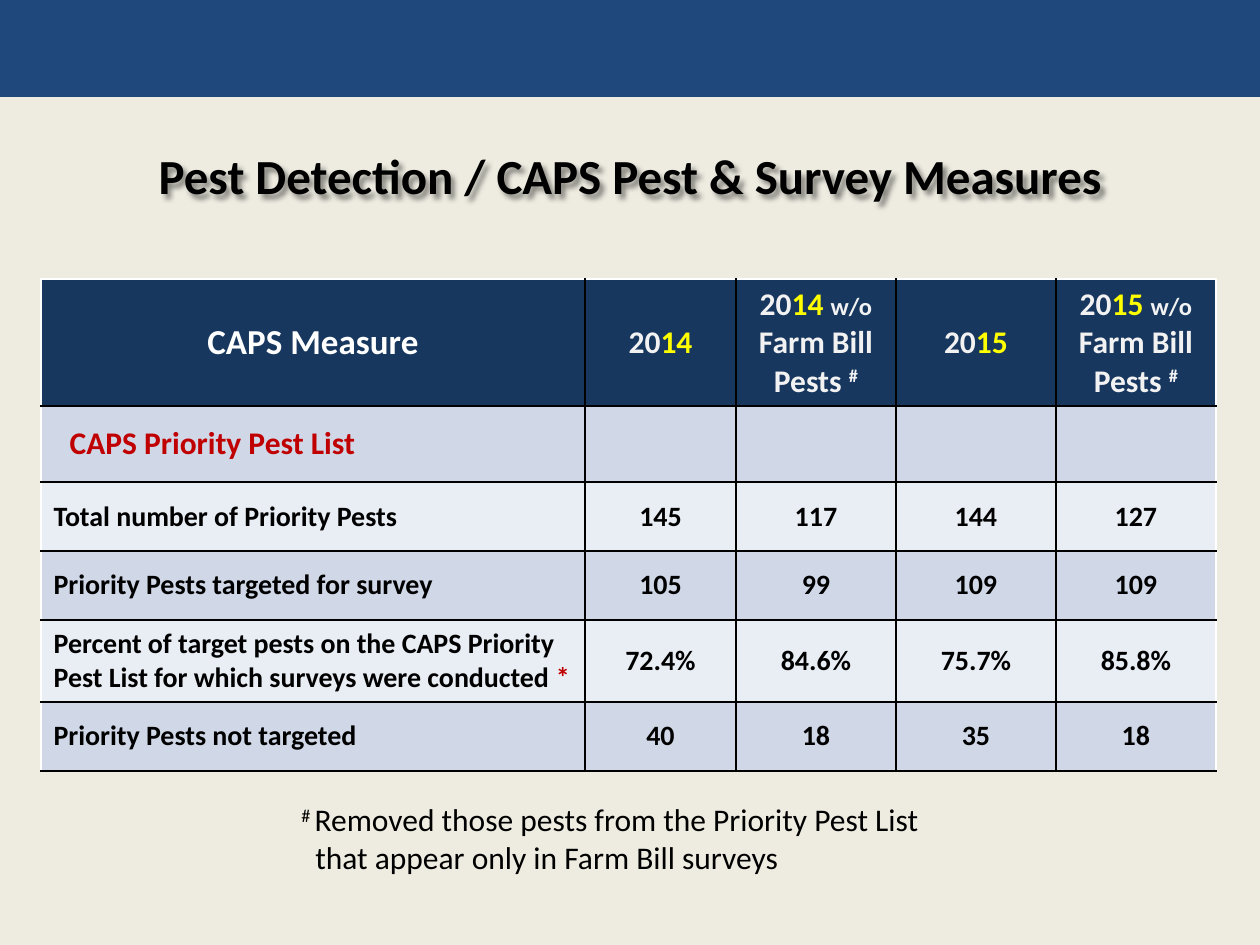
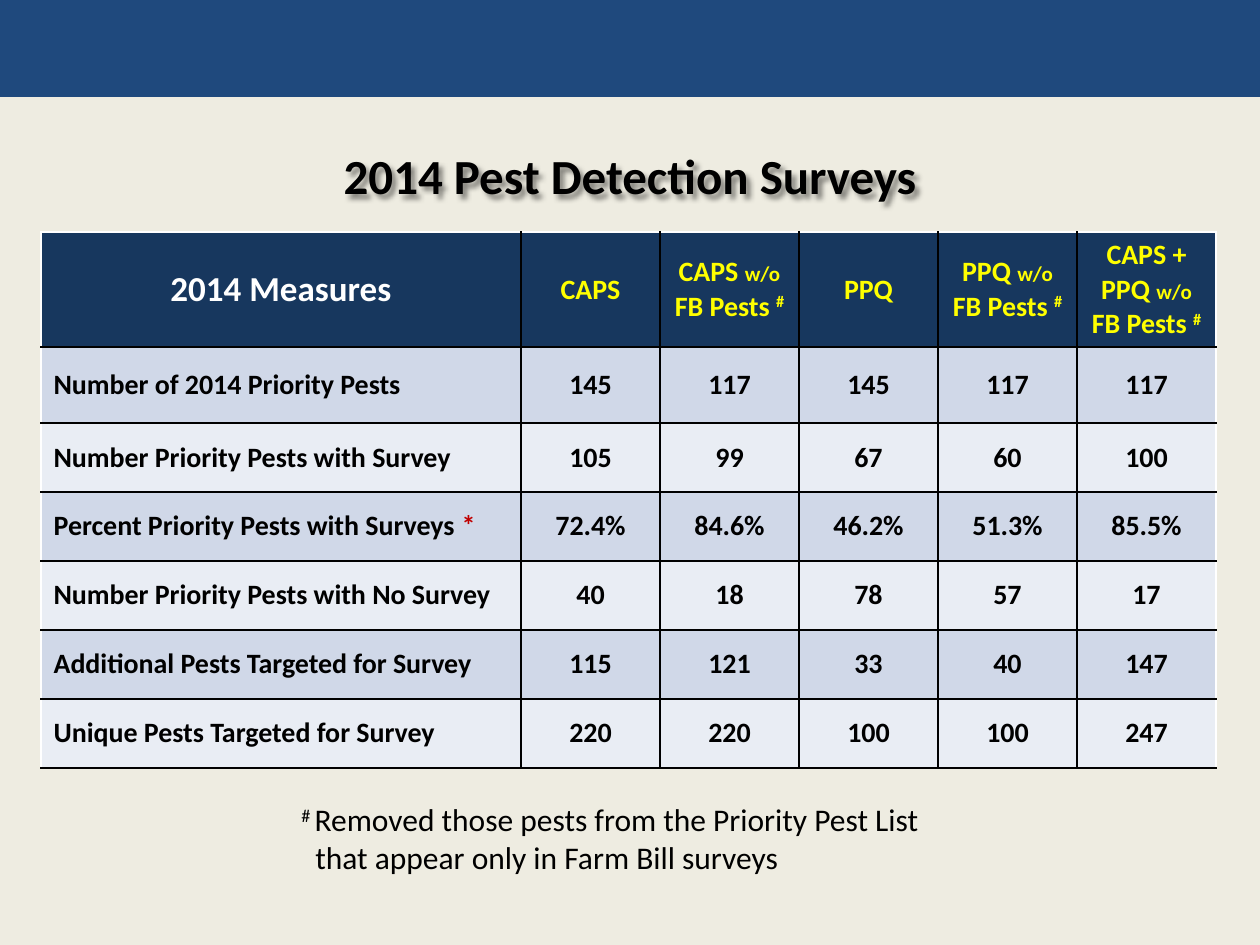
from typing import NamedTuple

from lxml import etree
from pptx import Presentation
from pptx import util as u
from pptx.dml.color import RGBColor
from pptx.enum import shapes, text
from pptx.oxml import ns, parse_xml

PX = 914400 / 126  # EMU in one px
FONT = "Calibri"
COLORS = {
    "page": "EEECE1", "band": "1F497D", "header": "17375E",
    "dark row": "D0D8E8", "light row": "E9EDF4",
    "black": "000000", "white": "FFFFFF", "pale": "F2F2F2",
    "yellow": "FFFF00", "red": "C00000",
}
DRAWING = "http://schemas.openxmlformats.org/drawingml/2006/main"
TITLE_SHADOW = f"""<a:effectLst xmlns:a="{DRAWING}">
<a:outerShdw blurRad="38100" dist="38100" dir="2700000" algn="tl">
<a:srgbClr val="000000"><a:alpha val="43000"/></a:srgbClr></a:outerShdw></a:effectLst>"""


class Run(NamedTuple):
    words: str
    size: int = 16
    color: str = "black"
    bold: bool = True
    raised: bool = False


class Row(NamedTuple):
    height: int
    label: list[Run]
    values: list[str]
    indent: int = 0


class MeasureSlide(NamedTuple):
    title: str
    top: int
    columns: list[int]
    header_height: int
    headers: list[list[Run]]
    rows: list[Row]


def px(length: float) -> u.Emu:
    return u.Emu(round(length * PX))


def rgb(name: str) -> RGBColor:
    return RGBColor.from_string(COLORS[name])


def add_runs(paragraph, runs: list[Run], centered: bool = False) -> None:
    paragraph.alignment = text.PP_ALIGN.CENTER if centered else text.PP_ALIGN.LEFT
    for item in runs:
        run = paragraph.add_run()
        run.text = item.words
        run.font.name = FONT
        run.font.size = u.Pt(item.size)
        run.font.bold = item.bold
        run.font.color.rgb = rgb(item.color)
        if item.raised:
            run.font._element.set("baseline", "30000")


def set_indent(paragraph, indent: int) -> None:
    properties = paragraph._p.get_or_add_pPr()
    properties.set("marL", str(px(indent)))
    properties.set("indent", "0")


# Parts shared by both slides
def add_frame(slide, title: str) -> None:
    slide.background.fill.solid()
    slide.background.fill.fore_color.rgb = rgb("page")
    band = slide.shapes.add_shape(
        shapes.MSO_SHAPE.RECTANGLE, 0, 0, px(1260), px(97))
    band.shadow.inherit = False
    band.fill.solid()
    band.fill.fore_color.rgb = rgb("band")
    band.line.fill.background()

    box = slide.shapes.add_textbox(px(63), px(126), px(1134), px(98))
    box.text_frame.word_wrap = True
    box.text_frame.vertical_anchor = text.MSO_ANCHOR.MIDDLE
    add_runs(box.text_frame.paragraphs[0], [Run(title, 28)], centered=True)
    box._element.spPr.append(parse_xml(TITLE_SHADOW))


def add_footnote(slide) -> None:
    box = slide.shapes.add_textbox(px(289), px(794), px(651), px(89))
    frame = box.text_frame
    frame.word_wrap = False
    add_runs(frame.paragraphs[0], [
        Run("# ", 18, bold=False, raised=True),
        Run("Removed those pests from the Priority Pest List", 18, bold=False)])
    second = frame.add_paragraph()
    set_indent(second, 14)
    add_runs(second, [Run("that appear only in Farm Bill surveys", 18, bold=False)])


# Table
def set_borders(cell, colors: dict[str, str]) -> None:
    properties = cell._tc.get_or_add_tcPr()
    for index, (side, color) in enumerate(colors.items()):
        line = etree.Element(ns.qn(f"a:ln{side}"), w=str(u.Pt(1)))
        fill = etree.SubElement(line, ns.qn("a:solidFill"))
        etree.SubElement(fill, ns.qn("a:srgbClr"), val=COLORS[color])
        properties.insert(index, line)


def style_cell(cell, fill: str, first: bool, last: bool, top: bool) -> None:
    cell.vertical_anchor = text.MSO_ANCHOR.MIDDLE
    cell.fill.solid()
    cell.fill.fore_color.rgb = rgb(fill)
    set_borders(cell, {
        "L": "white" if first else "black",
        "R": "white" if last else "black",
        "T": "white" if top else "black",
        "B": "black"})


def add_measure_table(slide, content: MeasureSlide) -> None:
    heights = [content.header_height] + [row.height for row in content.rows]
    column_count = len(content.columns)
    table = slide.shapes.add_table(
        len(heights), column_count, px(41), px(content.top),
        px(sum(content.columns)), px(sum(heights))).table
    table.first_row = table.horz_banding = False
    for column, width in zip(table.columns, content.columns):
        column.width = px(width)
    for row_index, height in enumerate(heights):
        table.rows[row_index].height = px(height)
        fill = "header" if row_index == 0 else (
            "dark row" if row_index % 2 else "light row")
        for column_index in range(column_count):
            style_cell(table.cell(row_index, column_index), fill,
                       column_index == 0, column_index == column_count - 1,
                       row_index == 0)

    for column_index, runs in enumerate(content.headers):
        add_runs(table.cell(0, column_index).text_frame.paragraphs[0], runs, True)
    for row_index, row in enumerate(content.rows, 1):
        label = table.cell(row_index, 0).text_frame.paragraphs[0]
        if row.indent:
            set_indent(label, row.indent)
        add_runs(label, row.label)
        for column_index, value in enumerate(row.values, 1):
            cell = table.cell(row_index, column_index)
            cell.margin_left = cell.margin_right = 0
            cell.margin_top = cell.margin_bottom = 0
            add_runs(cell.text_frame.paragraphs[0], [Run(value)], True)


# Header wording
def year(digits: str) -> list[Run]:
    return [Run("20", 18, "pale"), Run(digits, 18, "yellow")]


def without(start: list[Run], pests: str, size: int, color: str) -> list[Run]:
    return start + [Run(" ", size, color), Run("w/o", size - 4, color),
                    Run(f" {pests} ", size, color),
                    Run("#", size, color, raised=True)]


def year_without(digits: str) -> list[Run]:
    return without(year(digits), "Farm Bill Pests", 18, "pale")


def program(name: str) -> list[Run]:
    return [Run(name, color="yellow")]


def program_without(name: str) -> list[Run]:
    return without(program(name), "FB Pests", 16, "yellow")


STAR = Run("*", color="red")
SLIDES = [
    MeasureSlide(
        "Pest Detection / CAPS Pest & Survey Measures", 279,
        [544, 151, 160, 160, 160], 127,
        [[Run("CAPS Measure", 20, "white")], year("14"), year_without("14"),
         year("15"), year_without("15")],
        [Row(76, [Run("CAPS Priority Pest List", 18, "red")], [], indent=16),
         Row(69, [Run("Total number of Priority Pests")],
             ["145", "117", "144", "127"]),
         Row(69, [Run("Priority Pests targeted for survey")],
             ["105", "99", "109", "109"]),
         Row(82, [Run("Percent of target pests on the CAPS Priority Pest List "
                      "for which surveys were conducted "), STAR],
             ["72.4%", "84.6%", "75.7%", "85.8%"]),
         Row(69, [Run("Priority Pests not targeted")],
             ["40", "18", "35", "18"])]),
    MeasureSlide(
        "2014 Pest Detection Surveys", 232, [480] + [139] * 5, 115,
        [[Run("2014 Measures", 20, "white")],
         program("CAPS"), program_without("CAPS"),
         program("PPQ"), program_without("PPQ"), program_without("CAPS + PPQ")],
        [Row(76, [Run("Number of 2014 Priority Pests")],
             ["145", "117", "145", "117", "117"]),
         Row(69, [Run("Number Priority Pests with Survey")],
             ["105", "99", "67", "60", "100"]),
         Row(69, [Run("Percent Priority Pests with Surveys "), STAR],
             ["72.4%", "84.6%", "46.2%", "51.3%", "85.5%"]),
         Row(69, [Run("Number Priority Pests with No Survey")],
             ["40", "18", "78", "57", "17"]),
         Row(69, [Run("Additional Pests Targeted for Survey")],
             ["115", "121", "33", "40", "147"]),
         Row(69, [Run("Unique Pests Targeted for Survey")],
             ["220", "220", "100", "100", "247"])]),
]


def main() -> None:
    presentation = Presentation()
    presentation.slide_width, presentation.slide_height = px(1260), px(945)
    for content in SLIDES:
        slide = presentation.slides.add_slide(presentation.slide_layouts[6])
        add_frame(slide, content.title)
        add_measure_table(slide, content)
        add_footnote(slide)
    presentation.save("out.pptx")


if __name__ == "__main__":
    main()
